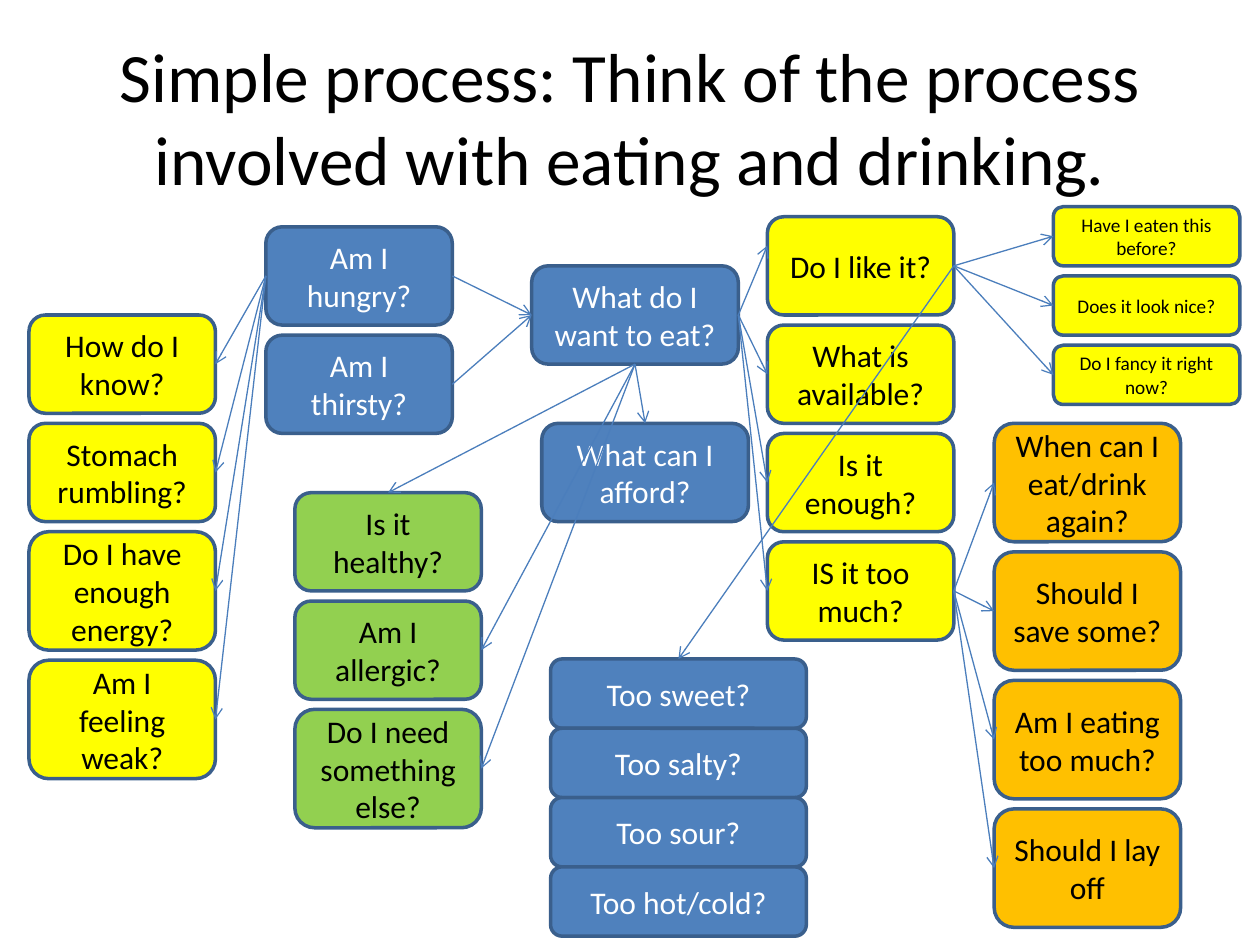
from lxml import etree
from pptx import Presentation
from pptx.dml.color import RGBColor
from pptx.enum.shapes import MSO_CONNECTOR, MSO_SHAPE
from pptx.enum.text import MSO_ANCHOR, MSO_AUTO_SIZE, PP_ALIGN
from pptx.oxml.ns import qn
from pptx.util import Inches, Pt

ROUNDED = MSO_SHAPE.ROUNDED_RECTANGLE
STRAIGHT = MSO_CONNECTOR.STRAIGHT
CENTER = PP_ALIGN.CENTER
MIDDLE = MSO_ANCHOR.MIDDLE
NO_AUTOFIT = MSO_AUTO_SIZE.NONE
TOP, LEFT, BOTTOM, RIGHT = range(4)

THEME = {
    "font": "Calibri",
    "title": 39.6, "body": 18, "small": 11,
    "black": "000000", "white": "FFFFFF",
    "blue": "4F81BD", "yellow": "FFFF00", "green": "92D050", "orange": "FFC000",
    "outline": "3A5F8C", "arrow": "4B7EBC",
    "outline_width": 2, "arrow_width": 0.75,
}

TITLE = "Simple process: Think of the process involved with eating and drinking."
GAP, SHORT, TALL = 0.08, 0.78, 0.94

# left, top, width, gap, fill, text size, [(text, height)]
COLUMNS = [
    (2.11, 1.8, 1.48, GAP, "blue", "body", [("Am I hungry?", SHORT), ("Am I thirsty?", SHORT)]),
    (0.23, 2.5, 1.48, GAP, "yellow", "body", [
        ("How do I know?", SHORT), ("Stomach rumbling?", SHORT),
        ("Do I have enough energy?", TALL), ("Am I feeling weak?", TALL)]),
    (4.22, 2.11, 1.64, GAP, "blue", "body", [("What do I want to eat?", SHORT)]),
    (6.09, 1.72, 1.48, GAP, "yellow", "body", [
        ("Do I like it?", SHORT), ("What is available?", SHORT),
        ("Is it enough?", SHORT), ("IS it too much?", SHORT)]),
    (7.89, 3.36, 1.48, GAP, "orange", "body", [
        ("When can I eat/drink again?", TALL), ("Should I save some?", TALL),
        ("Am I eating too much?", TALL), ("Should I lay off", TALL)]),
    (4.3, 3.36, 1.64, GAP, "blue", "body", [("What can I afford?", SHORT)]),
    (2.34, 3.91, 1.48, GAP, "green", "body", [
        ("Is it healthy?", SHORT), ("Am I allergic?", SHORT),
        ("Do I need something else?", TALL)]),
    (8.36, 1.64, 1.48, GAP, "yellow", "small", [
        ("Have I eaten this before?", 0.47), ("Does it look nice?", 0.47),
        ("Do I fancy it right now?", 0.47)]),
    (4.37, 5.23, 2.03, 0, "blue", "body", [
        ("Too sweet?", 0.55), ("Too salty?", 0.55), ("Too sour?", 0.55),
        ("Too hot/cold?", 0.55)]),
]

ARROWS = [
    ("Am I hungry?", LEFT, RIGHT, [
        "How do I know?", "Stomach rumbling?", "Do I have enough energy?", "Am I feeling weak?"]),
    ("Am I hungry?", RIGHT, LEFT, ["What do I want to eat?"]),
    ("Am I thirsty?", RIGHT, LEFT, ["What do I want to eat?"]),
    ("What do I want to eat?", RIGHT, LEFT, [
        "What is available?", "Is it enough?", "IS it too much?"]),
    ("What do I want to eat?", BOTTOM, TOP, ["What can I afford?", "Is it healthy?"]),
    ("What do I want to eat?", BOTTOM, RIGHT, ["Am I allergic?", "Do I need something else?"]),
    ("IS it too much?", RIGHT, LEFT, [
        "When can I eat/drink again?", "Should I save some?",
        "Am I eating too much?", "Should I lay off"]),
    ("Do I like it?", RIGHT, LEFT, [
        "Have I eaten this before?", "Does it look nice?", "Do I fancy it right now?"]),
    ("Do I like it?", RIGHT, TOP, ["Too sweet?"]),
]
LIKE_ARROW_END = (6.09, 1.95)


def color(name):
    return RGBColor.from_string(THEME[name])


def write_text(shape, text, size, text_color):
    frame = shape.text_frame
    frame.text = text
    frame.word_wrap = True
    frame.auto_size = NO_AUTOFIT
    frame.vertical_anchor = MIDDLE
    paragraph = frame.paragraphs[0]
    paragraph.alignment = CENTER
    paragraph.font.name = THEME["font"]
    paragraph.font.size = Pt(THEME[size])
    paragraph.font.color.rgb = color(text_color)


def add_box(slide, bounds, text, fill, size):
    shape = slide.shapes.add_shape(ROUNDED, *map(Inches, bounds))
    shape.shadow.inherit = False
    shape.fill.solid()
    shape.fill.fore_color.rgb = color(fill)
    shape.line.color.rgb = color("outline")
    shape.line.width = Pt(THEME["outline_width"])
    write_text(shape, text, size, "white" if fill == "blue" else "black")
    return shape


def add_arrow(slide, source, source_side, end=(0, 0), target=None, target_side=LEFT):
    connector = slide.shapes.add_connector(STRAIGHT, 0, 0, *map(Inches, end))
    connector.begin_connect(source, source_side)
    if target is not None:
        connector.end_connect(target, target_side)
    connector.line.color.rgb = color("arrow")
    connector.line.width = Pt(THEME["arrow_width"])
    etree.SubElement(connector.line._get_or_add_ln(), qn("a:tailEnd"), type="arrow")
    etree.SubElement(connector._element.spPr, qn("a:effectLst"))


def main():
    presentation = Presentation()
    presentation.slide_width, presentation.slide_height = Inches(10), Inches(7.5)
    slide = presentation.slides.add_slide(presentation.slide_layouts[5])

    title = slide.shapes.title
    title.left, title.top, title.width, title.height = map(Inches, (0.5, 0.3, 9, 1.25))
    write_text(title, TITLE, "title", "black")

    boxes = {}
    for left, top, width, gap, fill, size, questions in COLUMNS:
        for text, height in questions:
            boxes[text] = add_box(slide, (left, top, width, height), text, fill, size)
            top += height + gap

    for source, source_side, target_side, targets in ARROWS:
        for target in targets:
            add_arrow(slide, boxes[source], source_side,
                      target=boxes[target], target_side=target_side)
    add_arrow(slide, boxes["What do I want to eat?"], RIGHT, end=LIKE_ARROW_END)

    presentation.save("out.pptx")


if __name__ == "__main__":
    main()
